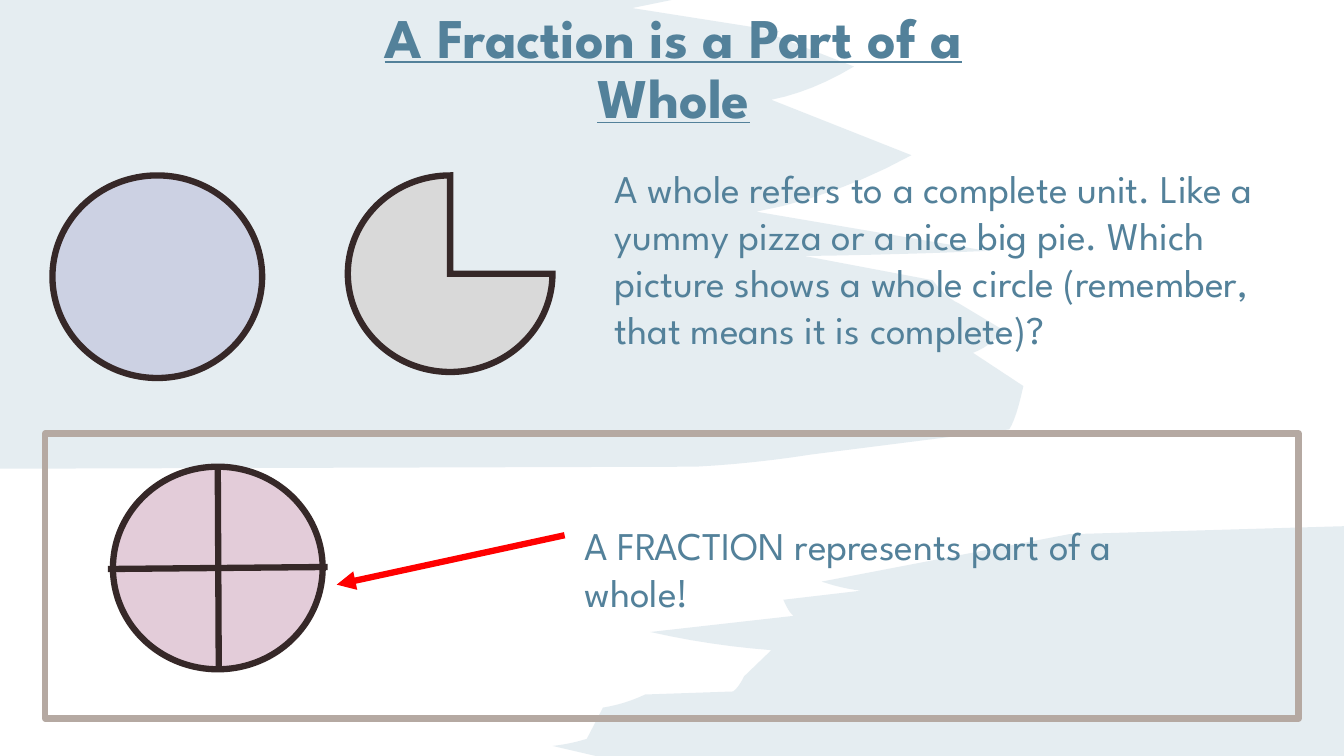
import lxml.etree
import pptx
import pptx.dml.color
import pptx.enum.shapes
import pptx.enum.text
import pptx.oxml.ns
import pptx.util

SHAPE = pptx.enum.shapes.MSO_SHAPE
ALIGN = pptx.enum.text.PP_ALIGN
ANCHOR = pptx.enum.text.MSO_ANCHOR
FIT = pptx.enum.text.MSO_AUTO_SIZE
Inches = pptx.util.Inches

PAGE_WIDTH, PAGE_HEIGHT = 13.33, 7.5
COLORS = {
    "page": "FFFFFF", "brush": "81A7BB", "text": "53819A", "outline": "362828",
    "whole": "CCD1E3", "part": "D9D9D9", "quarters": "E3CCD9",
    "arrow": "FF0000", "frame": "B5A9A2",
}
FONT = "League Spartan"
STROKE = 4.5
BRUSH_OPACITY = 20
CURVE_STEPS = 6
SAG = 0.75

TITLE = {"text": "A Fraction is a Part of a Whole", "place": (3.33, -0.15, 6.7, 1.5)}
NOTES = [
    {"text": "A whole refers to a complete unit. Like a yummy pizza or a nice big pie. "
             "Which picture shows a whole circle (remember, that means it is complete)?",
     "place": (6, 1.58, 6.54, 2.46)},
    {"text": "A FRACTION represents part of a whole!", "place": (5.7, 5.12, 6.32, 1.04)},
]

CIRCLE_SIZE = (2.08, 2.01)
QUARTERED_AT = (1.12, 4.63)
FIGURES = [
    {"kind": SHAPE.OVAL, "place": (0.52, 1.74) + CIRCLE_SIZE, "fill": "whole"},
    {"kind": SHAPE.PIE, "place": (3.45, 1.74, 2.03, 1.95), "fill": "part"},
    {"kind": SHAPE.OVAL, "place": QUARTERED_AT + CIRCLE_SIZE, "fill": "quarters"},
    {"kind": SHAPE.RECTANGLE, "place": (0.45, 4.3, 12.43, 2.83), "stroke": "frame"},
]
CUT_OVERHANG = 0.05
CUT_TILT = 0.01
ARROW = {"start": (5.6, 5.31), "end": (3.34, 5.8)}

# BRISTLES_PLACEHOLDER
BRUSHES = {
    "upper left": {
        "corners": [(0, 4.65), (0, 0), (6.66, 0), (6.27, 0.08)],
        "bristles": [
            {"tip": (7.73, 0.31), "notch": (7.65, 0.34)},
            {"tip": (8.47, 0.66), "notch": (7.65, 0.99)},
            {"tip": (9.04, 1.54), "notch": (7.5, 2.1)},
            {"tip": (9.79, 2.49), "notch": (7.98, 2.54)},
            {"tip": (9.25, 2.78), "notch": (9.51, 3.01)},
            {"tip": (9.96, 3.28), "notch": (9.65, 3.5)},
            {"tip": (10.15, 3.83), "notch": (10.01, 4.26)},
            {"tip": (8.04, 4.51), "notch": (6.9, 4.63)},
        ],
    },
    "lower right": {
        "corners": [(5.91, PAGE_HEIGHT), (PAGE_WIDTH, PAGE_HEIGHT),
                    (PAGE_WIDTH, 5.22), (10.6, 5.3)],
        "bristles": [
            {"tip": (8.15, 5.77), "notch": (8.54, 5.86)},
            {"tip": (7.77, 5.95), "notch": (7.87, 6.11)},
            {"tip": (6.45, 6.27), "notch": (7.65, 6.45)},
            {"tip": (7.38, 6.71), "notch": (7.27, 6.86)},
            {"tip": (6.4, 6.89), "notch": (5.98, 7.02)},
            {"tip": (5.82, 7.33), "notch": (5.48, 7.4)},
        ],
    },
}


def rgb(name):
    return pptx.dml.color.RGBColor.from_string(COLORS[name])


def inches(values):
    return [Inches(value) for value in values]


def add_child(parent, tag, **attributes):
    return lxml.etree.SubElement(parent, pptx.oxml.ns.qn(tag), attributes)


def write_text(frame, text, size=28, bold=False, underline=False,
               align=ALIGN.LEFT, anchor=ANCHOR.TOP, spacing=None, fit=FIT.NONE):
    frame.word_wrap = True
    frame.auto_size = fit
    frame.vertical_anchor = anchor
    para = frame.paragraphs[0]
    para.alignment = align
    para.line_spacing = spacing
    span = para.add_run()
    span.text = text
    span.font.name = FONT
    span.font.size = pptx.util.Pt(size)
    span.font.bold = bold
    span.font.underline = underline
    span.font.color.rgb = rgb("text")


def sagging_edge(tip, notch):
    bend = ((tip[0] + notch[0]) / 2, tip[1] + SAG * (notch[1] - tip[1]))
    steps = [step / CURVE_STEPS for step in range(CURVE_STEPS + 1)]
    return [tuple((1 - t) ** 2 * a + 2 * t * (1 - t) * b + t * t * c
                  for a, b, c in zip(tip, bend, notch)) for t in steps]


def add_brush(page, corners, bristles):
    outline = list(corners)
    for bristle in bristles:
        outline += sagging_edge(bristle["tip"], bristle["notch"])
    points = [inches(point) for point in outline]
    builder = page.shapes.build_freeform(*points[0])
    builder.add_line_segments(points[1:], close=True)
    brush = builder.convert_to_shape()
    brush.shadow.inherit = False
    brush.line.fill.background()
    brush.fill.solid()
    brush.fill.fore_color.rgb = rgb("brush")
    color = brush._element.spPr.find(".//" + pptx.oxml.ns.qn("a:srgbClr"))
    add_child(color, "a:alpha", val=str(BRUSH_OPACITY * 1000))


def add_figure(page, kind, place, fill=None, stroke="outline"):
    figure = page.shapes.add_shape(kind, *inches(place))
    figure.shadow.inherit = False
    if fill:
        figure.fill.solid()
        figure.fill.fore_color.rgb = rgb(fill)
    else:
        figure.fill.background()
    figure.line.color.rgb = rgb(stroke)
    figure.line.width = pptx.util.Pt(STROKE)
    if kind == SHAPE.PIE:
        add_child(figure.line._get_or_add_ln(), "a:miter", lim="800000")


def add_line(page, start, end, color="outline", arrow=False):
    line = page.shapes.add_connector(
        pptx.enum.shapes.MSO_CONNECTOR.STRAIGHT, *inches(start + end))
    line.line.color.rgb = rgb(color)
    line.line.width = pptx.util.Pt(STROKE)
    if arrow:
        add_child(line.line._get_or_add_ln(), "a:tailEnd", type="triangle")
    add_child(line._element.spPr, "a:effectLst")


def add_quarter_cuts(page):
    left, top = QUARTERED_AT
    width, height = CIRCLE_SIZE
    middle_x, middle_y = left + width / 2, top + height / 2
    add_line(page, (middle_x, top), (middle_x + CUT_TILT, top + height))
    add_line(page, (left + width + CUT_OVERHANG, middle_y - CUT_TILT),
             (left - CUT_OVERHANG, middle_y + CUT_TILT))


def main():
    deck = pptx.Presentation()
    deck.slide_width, deck.slide_height = inches((PAGE_WIDTH, PAGE_HEIGHT))
    page = deck.slides.add_slide(deck.slide_layouts.get_by_name("Title Only"))
    page.background.fill.solid()
    page.background.fill.fore_color.rgb = rgb("page")

    for brush in BRUSHES.values():
        add_brush(page, **brush)

    title = page.shapes.title
    title.left, title.top, title.width, title.height = inches(TITLE["place"])
    write_text(title.text_frame, TITLE["text"], size=40, bold=True, underline=True,
               align=ALIGN.CENTER, anchor=ANCHOR.BOTTOM, spacing=0.9)
    page.shapes._spTree.append(title._element)

    for figure in FIGURES:
        add_figure(page, **figure)
    add_quarter_cuts(page)
    add_line(page, **ARROW, color="arrow", arrow=True)
    for note in NOTES:
        box = page.shapes.add_textbox(*inches(note["place"]))
        write_text(box.text_frame, note["text"], fit=FIT.SHAPE_TO_FIT_TEXT)
    deck.save("out.pptx")


if __name__ == "__main__":
    main()
